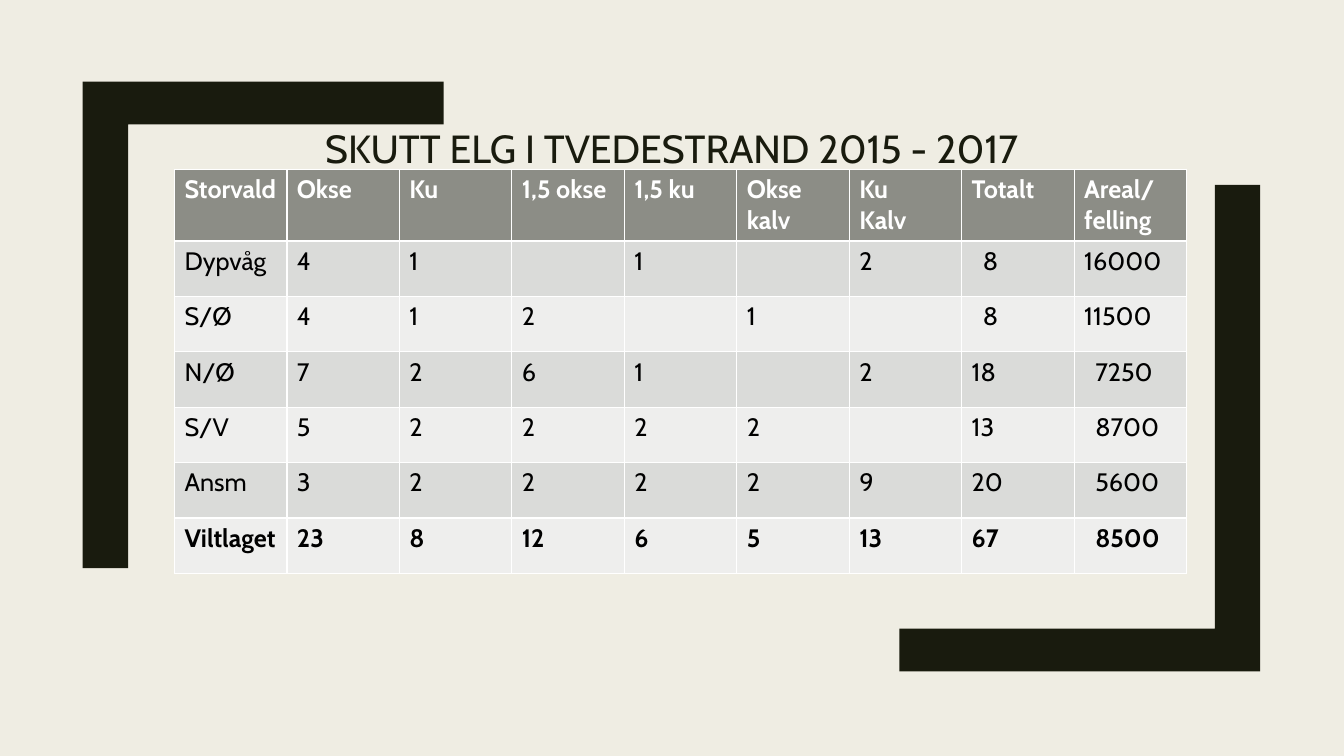
from dataclasses import dataclass

import pptx
import pptx.dml.color
import pptx.enum.text
import pptx.presentation
import pptx.shapes.autoshape
import pptx.slide
import pptx.table
import pptx.util

SLIDE_WIDTH = pptx.util.Inches(13.33)
SLIDE_HEIGHT = pptx.util.Inches(7.5)


@dataclass(frozen=True)
class Theme:
    font: str = "Cabin"
    background: str = "EFEDE3"
    ink: str = "191B0E"
    header_fill: str = "8C8D86"
    header_text: str = "FFFFFF"
    body_text: str = "000000"
    bands: tuple[str, str] = ("DADBD9", "EEEEED")
    title_size: int = 28
    table_size: int = 18


@dataclass(frozen=True)
class Box:
    """Area in percent of the slide's width and height."""
    left: float
    top: float
    width: float
    height: float

    def lengths(self) -> tuple[int, int, int, int]:
        return (across(self.left), down(self.top),
                across(self.width), down(self.height))


@dataclass(frozen=True)
class Bracket:
    """Outer corner in percent; direction 1 opens right and down, -1 left and up."""
    x: float
    y: float
    direction: int


THEME = Theme()
TITLE = "SKUTT ELG I TVEDESTRAND 2015 - 2017"
TITLE_BOX = Box(15.68, 17.07, 68.57, 6.4)
TABLE_BOX = Box(12.98, 22.4, 75.32, 51.33)
BRACKETS = (Bracket(93.77, 88.8, -1), Bracket(6.15, 10.8, 1))
ARM_WIDTH, ARM_HEIGHT = 26.86, 64.35
BAR_WIDTH, BAR_HEIGHT = 3.38, 5.65
SHORT_NUMBER_INDENT = pptx.util.Inches(0.11)
ALIGNED_COLUMNS = (7, 8)

ROWS = (
    ("Storvald", "Okse", "Ku", "1,5 okse", "1,5 ku", "Okse kalv", "Ku\nKalv", "Totalt", "Areal/ felling"),
    ("Dypvåg", "4", "1", "", "1", "", "2", "8", "16000"),
    ("S/Ø", "4", "1", "2", "", "1", "", "8", "11500"),
    ("N/Ø", "7", "2", "6", "1", "", "2", "18", "7250"),
    ("S/V", "5", "2", "2", "2", "2", "", "13", "8700"),
    ("Ansm", "3", "2", "2", "2", "2", "9", "20", "5600"),
    ("Viltlaget", "23", "8", "12", "6", "5", "13", "67", "8500"),
)


def across(percent: float) -> int:
    return round(SLIDE_WIDTH * percent / 100)


def down(percent: float) -> int:
    return round(SLIDE_HEIGHT * percent / 100)


def color(value: str) -> pptx.dml.color.RGBColor:
    return pptx.dml.color.RGBColor.from_string(value)


def set_font(font: pptx.text.text.Font, size: int, value: str, bold: bool = False) -> None:
    font.name = THEME.font
    font.size = pptx.util.Pt(size)
    font.bold = bold
    font.color.rgb = color(value)


def draw_bracket(slide: pptx.slide.Slide, bracket: Bracket) -> None:
    offsets = ((ARM_WIDTH, 0), (ARM_WIDTH, BAR_HEIGHT), (BAR_WIDTH, BAR_HEIGHT),
               (BAR_WIDTH, ARM_HEIGHT), (0, ARM_HEIGHT))
    points = [(across(bracket.x + bracket.direction * x), down(bracket.y + bracket.direction * y))
              for x, y in offsets]
    builder = slide.shapes.build_freeform(across(bracket.x), down(bracket.y))
    builder.add_line_segments(points, close=True)
    shape = builder.convert_to_shape()
    shape.shadow.inherit = False
    shape.fill.solid()
    shape.fill.fore_color.rgb = color(THEME.ink)
    shape.line.fill.background()


def write_title(slide: pptx.slide.Slide) -> None:
    title = slide.shapes.title
    title.left, title.top, title.width, title.height = TITLE_BOX.lengths()
    frame = title.text_frame
    frame.text = TITLE
    frame.word_wrap = True
    frame.auto_size = pptx.enum.text.MSO_AUTO_SIZE.NONE
    frame.vertical_anchor = pptx.enum.text.MSO_ANCHOR.BOTTOM
    paragraph = frame.paragraphs[0]
    paragraph.alignment = pptx.enum.text.PP_ALIGN.CENTER
    paragraph.line_spacing = 0.89
    set_font(paragraph.font, THEME.title_size, THEME.ink)


def fill_cell(cell: pptx.table._Cell, row: int, column: int) -> None:
    text = ROWS[row][column]
    is_header = row == 0
    cell.text = text
    cell.fill.solid()
    cell.fill.fore_color.rgb = color(THEME.header_fill if is_header else THEME.bands[(row - 1) % 2])

    # Numbers with fewer digits than the widest in their column are indented
    if column in ALIGNED_COLUMNS and not is_header:
        widest = max(len(values[column]) for values in ROWS[1:])
        if len(text) < widest:
            cell.margin_left = cell.margin_left + SHORT_NUMBER_INDENT

    for paragraph in cell.text_frame.paragraphs:
        set_font(paragraph.font, THEME.table_size,
                 THEME.header_text if is_header else THEME.body_text,
                 bold=row in (0, len(ROWS) - 1))


def draw_table(slide: pptx.slide.Slide) -> None:
    table = slide.shapes.add_table(len(ROWS), len(ROWS[0]), *TABLE_BOX.lengths()).table
    for row, values in enumerate(ROWS):
        for column in range(len(values)):
            fill_cell(table.cell(row, column), row, column)


def main() -> None:
    presentation = pptx.Presentation()
    presentation.slide_width = SLIDE_WIDTH
    presentation.slide_height = SLIDE_HEIGHT
    slide = presentation.slides.add_slide(presentation.slide_layouts[0])

    # Background and unused subtitle
    slide.background.fill.solid()
    slide.background.fill.fore_color.rgb = color(THEME.background)
    subtitle = slide.placeholders[1].element
    subtitle.getparent().remove(subtitle)

    # Corner brackets
    for bracket in BRACKETS:
        draw_bracket(slide, bracket)

    # Title and table
    write_title(slide)
    draw_table(slide)
    presentation.save("out.pptx")


if __name__ == "__main__":
    main()
